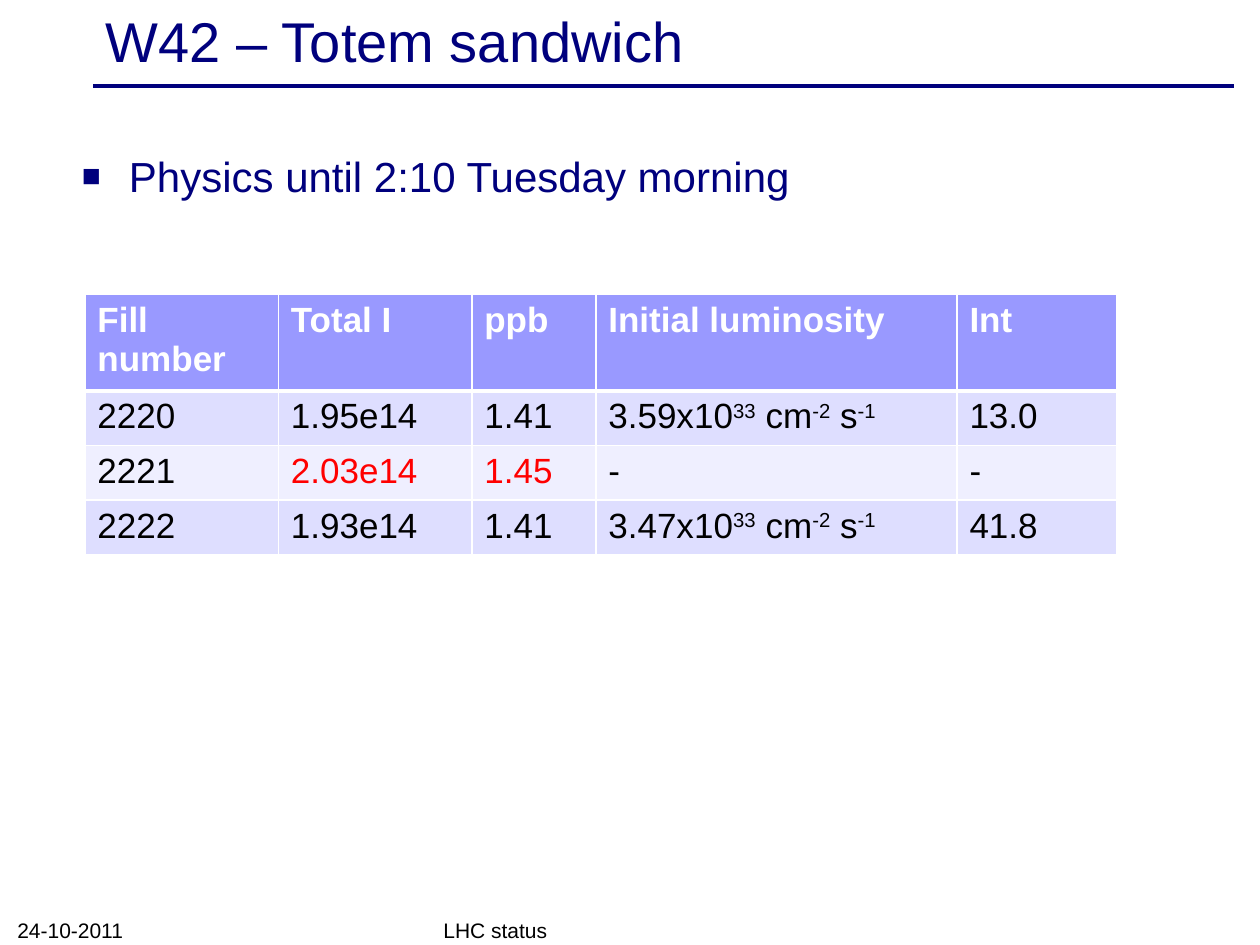
from dataclasses import dataclass

from lxml import etree
from pptx import Presentation
from pptx.dml.color import RGBColor
from pptx.enum.shapes import MSO_CONNECTOR
from pptx.enum.text import MSO_ANCHOR
from pptx.oxml.ns import qn
from pptx.util import Cm, Pt

LINE = MSO_CONNECTOR.STRAIGHT
TOP, MIDDLE, BOTTOM = MSO_ANCHOR.TOP, MSO_ANCHOR.MIDDLE, MSO_ANCHOR.BOTTOM


@dataclass(frozen=True)
class Theme:
    font: str = "Arial"
    navy: str = "00007D"
    black: str = "000000"
    white: str = "FFFFFF"
    red: str = "FF0000"
    head: str = "9999FF"
    bands: tuple = ("DEDEFF", "EFEFFF")
    title: int = 32
    body: int = 24
    cell: int = 20
    foot: int = 12


THEME = Theme()

HEADS = ["Fill number", "Total I", "ppb", "Initial luminosity", "Int"]
# In a tuple every second part is raised
FILLS = [
    ["2220", "1.95e14", "1.41", ("3.59x10", "33", " cm", "-2", " s", "-1"), "13.0"],
    ["2221", "2.03e14", "1.45", "-", "-"],
    ["2222", "1.93e14", "1.41", ("3.47x10", "33", " cm", "-2", " s", "-1"), "41.8"],
]
PEAKS = {"2.03e14", "1.45"}
WIDTHS = [3.9, 3.9, 2.5, 7.28, 3.22]


def add_node(parent, tag, **attrs):
    return etree.SubElement(parent, qn(tag), attrs)


def add_run(para, text, size, color, bold=False):
    run = para.add_run()
    run.text = text
    look = {"name": THEME.font, "size": Pt(size), "bold": bold}
    for key, value in look.items():
        setattr(run.font, key, value)
    run.font.color.rgb = RGBColor.from_string(color)
    return run


def add_text(slide, box, text, size, color, **frame):
    area = slide.shapes.add_textbox(*map(Cm, box)).text_frame
    for key, value in {"word_wrap": True, **frame}.items():
        setattr(area, key, value)
    para = area.paragraphs[0]
    add_run(para, text, size, color)
    return para


# Title with the rule below it
def add_title(slide, box, text):
    left, top, width, height = box
    add_text(slide, box, text, THEME.title, THEME.navy, vertical_anchor=MIDDLE)
    level = top + height + 0.2
    ends = (left, level, left + width + 0.13, level)
    rule = slide.shapes.add_connector(LINE, *map(Cm, ends))
    rule.line.color.rgb = RGBColor.from_string(THEME.navy)
    rule.line.width = Pt(2)
    add_node(rule._element.spPr, "a:effectLst")


# Bulleted body text
def add_body(slide, box, text):
    para = add_text(slide, box, text, THEME.body, THEME.navy,
                    vertical_anchor=TOP, margin_top=Cm(0.26))
    props = para._p.get_or_add_pPr()
    indent = Cm(0.95)
    props.set("marL", str(indent))
    props.set("indent", str(-indent))
    add_node(add_node(props, "a:buClr"), "a:srgbClr", val=THEME.navy)
    add_node(props, "a:buSzPct", val="75000")
    add_node(props, "a:buFont", typeface=THEME.font)
    add_node(props, "a:buChar", char="■")


def set_cell(cell, parts, fill, color, bold, edges):
    props = cell._tc.get_or_add_tcPr()
    for side, width in edges.items():
        edge = add_node(props, f"a:ln{side}", w=str(Pt(width)))
        add_node(add_node(edge, "a:solidFill"), "a:srgbClr", val=THEME.white)
    cell.fill.solid()
    cell.fill.fore_color.rgb = RGBColor.from_string(fill)
    para = cell.text_frame.paragraphs[0]
    for i, part in enumerate(parts):
        run = add_run(para, part, THEME.cell, color, bold)
        if i % 2:
            run._r.get_or_add_rPr().set("baseline", "30000")


# Table of fills
def add_fills(slide, box):
    rows = [HEADS, *FILLS]
    frame = slide.shapes.add_table(len(rows), len(HEADS), *map(Cm, box))
    table = frame.table
    for key in ("first_row", "horz_banding"):
        setattr(table, key, False)
    for col, width in zip(table.columns, WIDTHS):
        col.width = Cm(width)
    for r, row in enumerate(rows):
        head = r == 0
        table.rows[r].height = Cm(1.78 if head else 1.04)
        fill = THEME.head if head else THEME.bands[(r - 1) % 2]
        edges = {"L": 1, "R": 1, "T": 3 if r == 1 else 1, "B": 3 if head else 1}
        for c, item in enumerate(row):
            parts = item if isinstance(item, tuple) else (item,)
            color = THEME.white if head else THEME.red if item in PEAKS else THEME.black
            set_cell(table.cell(r, c), parts, fill, color, head, edges)


# Date and subject at the foot
def add_foot(slide, box, date, topic):
    left, top, width, height = box
    for text, start, span in ((date, 0, 5.92), (topic, 8.59, width - 8.59)):
        add_text(slide, (left + start, top, span, height), text,
                 THEME.foot, THEME.black, vertical_anchor=BOTTOM)


def main():
    deck = Presentation()
    deck.slide_width, deck.slide_height = Cm(25.4), Cm(19.05)
    slide = deck.slides.add_slide(deck.slide_layouts[6])
    add_title(slide, (1.88, 0.08, 22.86, 1.45), "W42 – Totem sandwich")
    add_body(slide, (1.4, 2.77, 22.86, 14.2), "Physics until 2:10 Tuesday morning")
    add_fills(slide, (1.71, 5.93, sum(WIDTHS), 4.9))
    add_foot(slide, (0.1, 18.4, 16.64, 0.72), "24-10-2011", "LHC status")
    deck.save("out.pptx")


if __name__ == "__main__":
    main()
